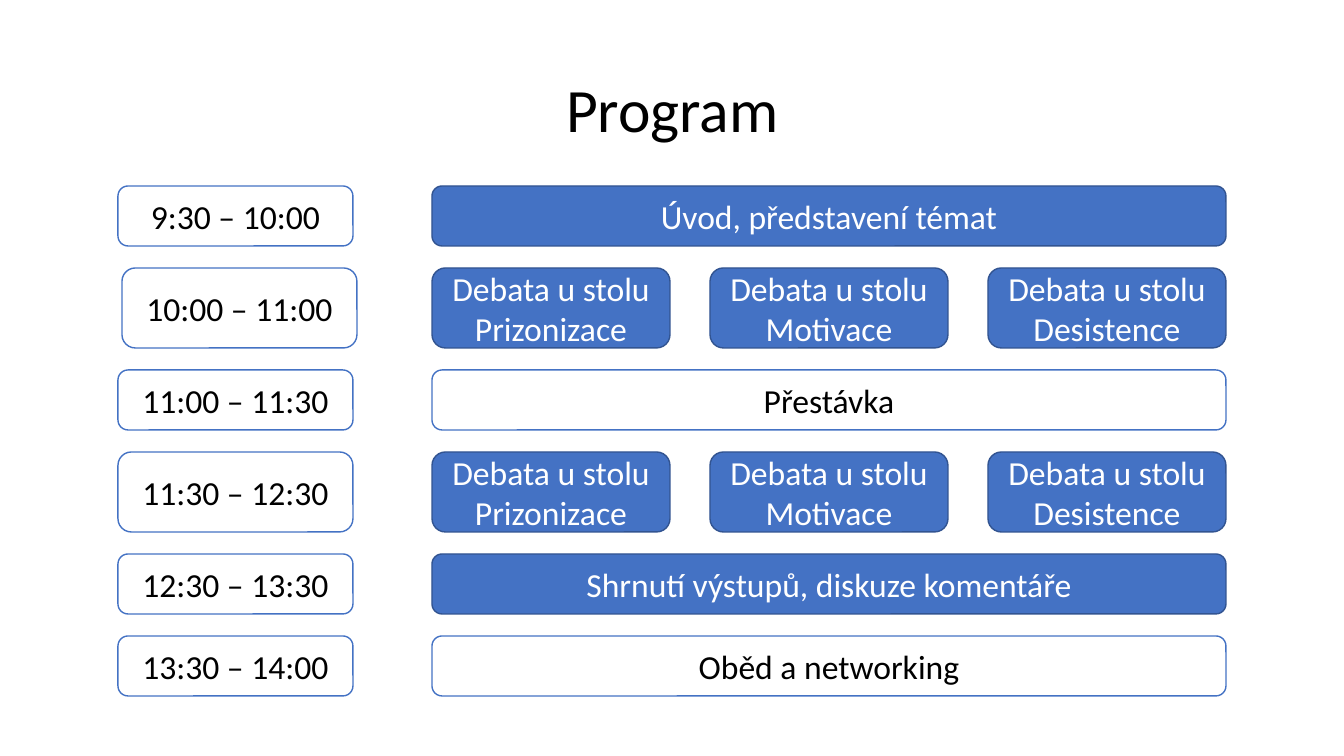
from pptx import Presentation
from pptx.dml.color import RGBColor as Rgb
from pptx.enum.shapes import MSO_SHAPE as Kind
from pptx.enum.text import MSO_ANCHOR as Anchor, PP_ALIGN as Align
from pptx.util import Pt

SCALE = 914400 / 100.8
THEME = {
    "font": "Calibri", "head": 44, "body": 24,
    "black": Rgb(0, 0, 0), "white": Rgb(255, 255, 255),
    "blue": Rgb(0x44, 0x72, 0xC4), "navy": Rgb(0x32, 0x54, 0x91),
}
TALKS = ["Debata u stolu Prizonizace", "Debata u stolu Motivace", "Debata u stolu Desistence"]
ROWS = [
    ("9:30 – 10:00", ["Úvod, představení témat"], True, 118),
    ("10:00 – 11:00", TALKS, True, 122),
    ("11:00 – 11:30", ["Přestávka"], False, 118),
    ("11:30 – 12:30", TALKS, True, 118),
    ("12:30 – 13:30", ["Shrnutí výstupů, diskuze komentáře"], True, 118),
    ("13:30 – 14:00", ["Oběd a networking"], False, 118),
]
TOP, LEFT, WIDTH = 186, 432, 794
TIME, GAP, SPACE = 235, 40, 22


def write(shape, text, size, color):
    frame = shape.text_frame
    frame.word_wrap = True
    frame.vertical_anchor = Anchor.MIDDLE
    frame.text = text
    para = frame.paragraphs[0]
    para.alignment = Align.CENTER
    font = para.runs[0].font
    font.name, font.size = THEME["font"], Pt(THEME[size])
    font.color.rgb = THEME[color]
    return para


def card(shapes, box, text, solid):
    shape = shapes.add_shape(Kind.ROUNDED_RECTANGLE, *[round(n * SCALE) for n in box])
    shape.shadow.inherit = False
    shape.fill.solid()
    shape.fill.fore_color.rgb = THEME["blue" if solid else "white"]
    shape.line.color.rgb = THEME["navy" if solid else "blue"]
    shape.line.width = Pt(1)
    write(shape, text, "body", "white" if solid else "black")


deck = Presentation()
deck.slide_width, deck.slide_height = round(1344 * SCALE), round(756 * SCALE)
slide = deck.slides.add_slide(deck.slide_layouts[6])

title = slide.shapes.add_textbox(*[round(n * SCALE) for n in (93, 40, 1159, 146)])
write(title, "Program", "head", "black").line_spacing = 0.9

group = slide.shapes.add_group_shape()
top = TOP
for time, items, solid, left in ROWS:
    count = len(items)
    tall = 80 if count > 1 else 60
    wide = (WIDTH - GAP * (count - 1)) // count
    for col, text in enumerate(items):
        card(group.shapes, (LEFT + col * (wide + GAP), top, wide, tall), text, solid)
    card(slide.shapes, (left, top, TIME, tall), time, False)
    top += tall + SPACE

deck.save("out.pptx")
